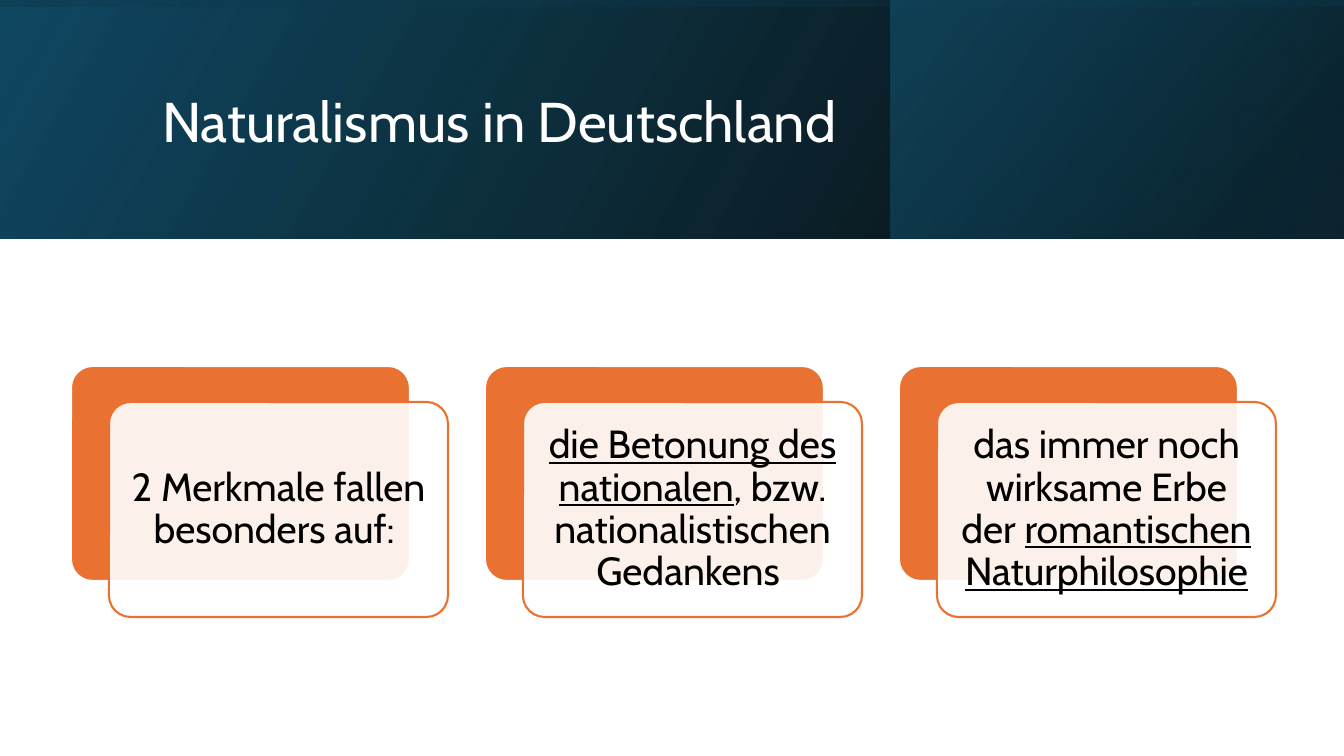
from lxml.etree import SubElement
from pptx import Presentation
from pptx.dml.color import RGBColor as RGB
from pptx.enum.shapes import MSO_SHAPE as SHAPE
from pptx.enum.text import MSO_ANCHOR as ANCHOR, MSO_AUTO_SIZE as AUTOSIZE, PP_ALIGN as ALIGN
from pptx.oxml.ns import qn
from pptx.util import Emu, Pt

EMU_PER_PX = 914400 / 100.8
SLIDE_W, SLIDE_H, HEADER_H = 1344, 756, 239
FONT = "Cabin"
COLORS = {
    "white": "FFFFFF",
    "black": "000000",
    "orange": "E97132",
    "navy": "104862",
    "deep": "0B3041",
    "teal": "156082",
}
BANDS = [
    ((0, 0, SLIDE_W, HEADER_H), 0, 330, [(0, "black", 96), (100, "navy", 100)]),
    ((891, 0, 453, HEADER_H), 0, 320, [(19, "deep", 68), (100, "teal", 48)]),
    (((SLIDE_W - HEADER_H) // 2, (HEADER_H - SLIDE_W) // 2, HEADER_H, SLIDE_W),
     270, 350, [(23, "navy", 16), (99, "black", 45)]),
]
CARD_LEFT, CARD_TOP, CARD_W, CARD_H = 71, 366, 339, 215
CARD_PITCH, FRONT_DX, FRONT_DY = 414, 38, 36
CARDS = [
    [("2 Merkmale fallen besonders auf: ", False)],
    [("die Betonung des nationalen", True),
     (", bzw. nationalistischen Gedankens ", False)],
    [("das immer noch wirksame Erbe der ", False),
     ("romantischen Naturphilosophie", True)],
]


def px(length):
    return Emu(round(length * EMU_PER_PX))


def rgb(name):
    return RGB.from_string(COLORS[name])


def set_alpha(color_element, percent):
    SubElement(color_element, qn("a:alpha")).set("val", str(percent * 1000))


def add_run(paragraph, text, size, color, underline=False):
    run = paragraph.add_run()
    run.text = text
    run.font.name = FONT
    run.font.size = Pt(size)
    run.font.color.rgb = rgb(color)
    if underline:
        run.font.underline = True


def add_band(slide, box, rotation, angle, stops):
    band = slide.shapes.add_shape(SHAPE.RECTANGLE, *map(px, box))
    band.shadow.inherit = False
    band.line.fill.background()
    band.rotation = rotation
    properties = band._element.spPr
    properties.find(qn("a:xfrm")).set("flipH", "1")
    band.fill.gradient()
    gradient = properties.find(qn("a:gradFill"))
    for child in list(gradient):
        gradient.remove(child)
    stop_list = SubElement(gradient, qn("a:gsLst"))
    for position, color, opacity in stops:
        stop = SubElement(stop_list, qn("a:gs"))
        stop.set("pos", str(position * 1000))
        color_element = SubElement(stop, qn("a:srgbClr"))
        color_element.set("val", COLORS[color])
        set_alpha(color_element, opacity)
    direction = SubElement(gradient, qn("a:lin"))
    direction.set("ang", str(angle * 60000))
    direction.set("scaled", "0")


def add_title(slide, text):
    title = slide.shapes.title
    title.left, title.top, title.width, title.height = map(px, (152, 38, 1072, 173))
    slide.shapes._spTree.append(title._element)
    frame = title.text_frame
    frame.auto_size = AUTOSIZE.NONE
    frame.vertical_anchor = ANCHOR.MIDDLE
    paragraph = frame.paragraphs[0]
    paragraph.alignment = ALIGN.LEFT
    paragraph.line_spacing = 0.9
    add_run(paragraph, text, 40, "white")


def add_panel(slide, left, top, fill, line):
    panel = slide.shapes.add_shape(
        SHAPE.ROUNDED_RECTANGLE, px(left), px(top), px(CARD_W), px(CARD_H))
    panel.adjustments[0] = 0.1
    panel.shadow.inherit = False
    panel.fill.solid()
    panel.fill.fore_color.rgb = rgb(fill)
    panel.line.color.rgb = rgb(line)
    panel.line.width = Pt(1.5)
    return panel


def add_card(slide, left, phrases):
    add_panel(slide, left, CARD_TOP, "orange", "white")
    front = add_panel(slide, left + FRONT_DX, CARD_TOP + FRONT_DY, "white", "orange")
    set_alpha(front._element.spPr.find(qn("a:solidFill"))[0], 90)
    frame = front.text_frame
    frame.word_wrap = True
    frame.vertical_anchor = ANCHOR.MIDDLE
    frame.margin_left = frame.margin_right = px(12)
    frame.margin_top = frame.margin_bottom = px(12)
    paragraph = frame.paragraphs[0]
    paragraph.alignment = ALIGN.CENTER
    paragraph.line_spacing = 0.9
    for text, underline in phrases:
        add_run(paragraph, text, 28, "black", underline)


def main():
    deck = Presentation()
    deck.slide_width, deck.slide_height = px(SLIDE_W), px(SLIDE_H)
    slide = deck.slides.add_slide(deck.slide_layouts[5])
    for band in BANDS:
        add_band(slide, *band)
    add_title(slide, "Naturalismus in Deutschland")
    for column, phrases in enumerate(CARDS):
        add_card(slide, CARD_LEFT + column * CARD_PITCH, phrases)
    deck.save("out.pptx")


if __name__ == "__main__":
    main()
